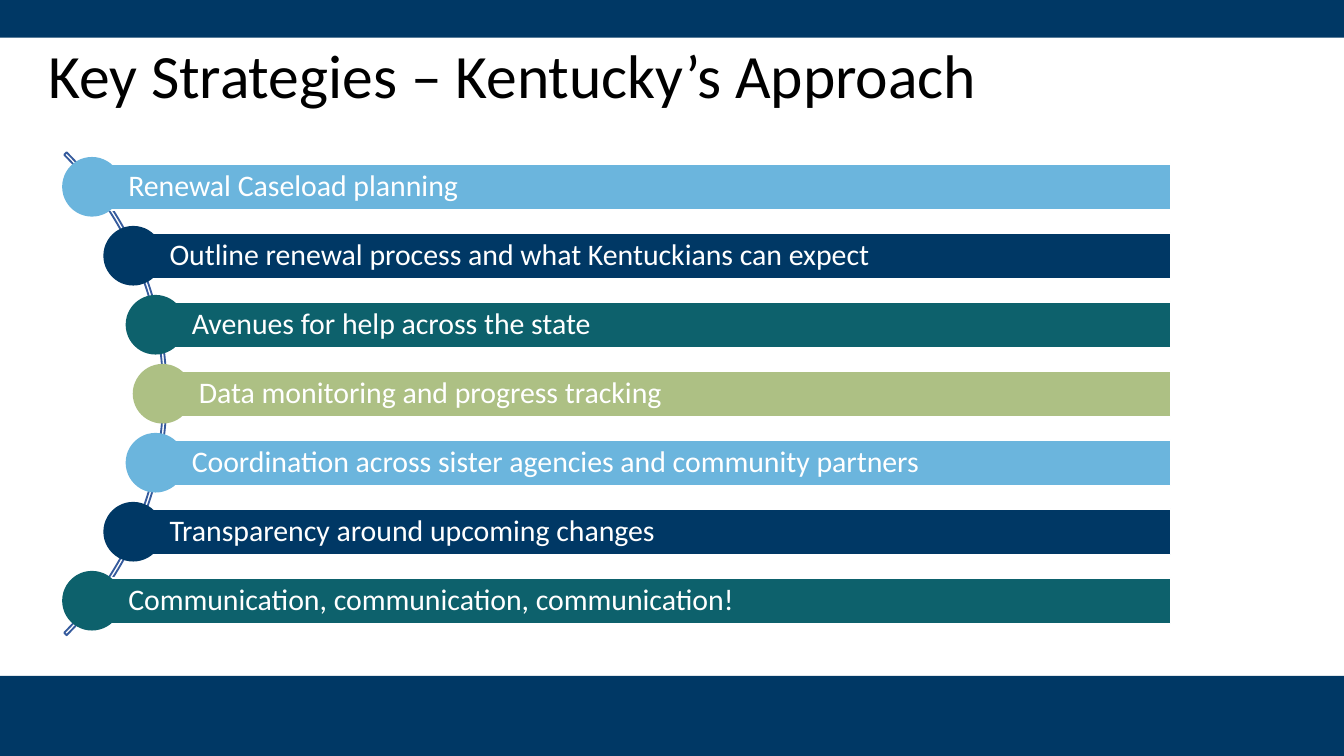
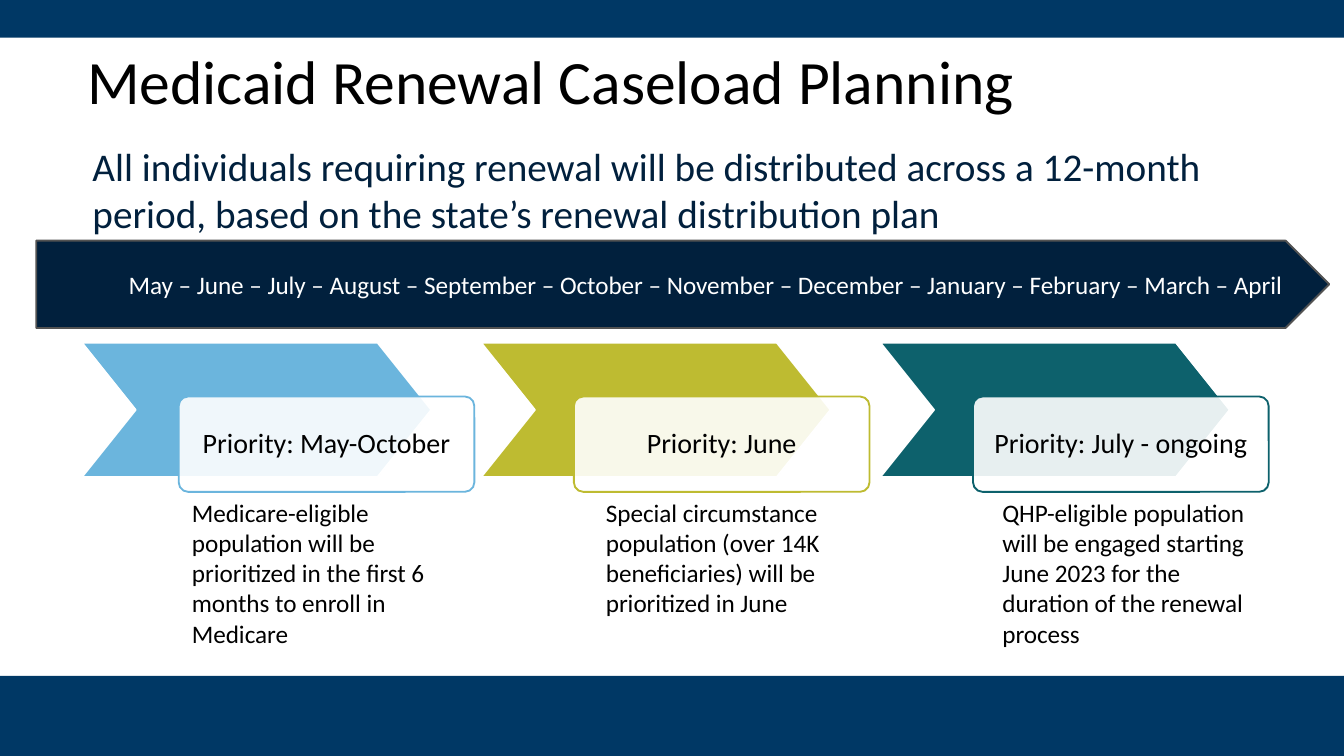
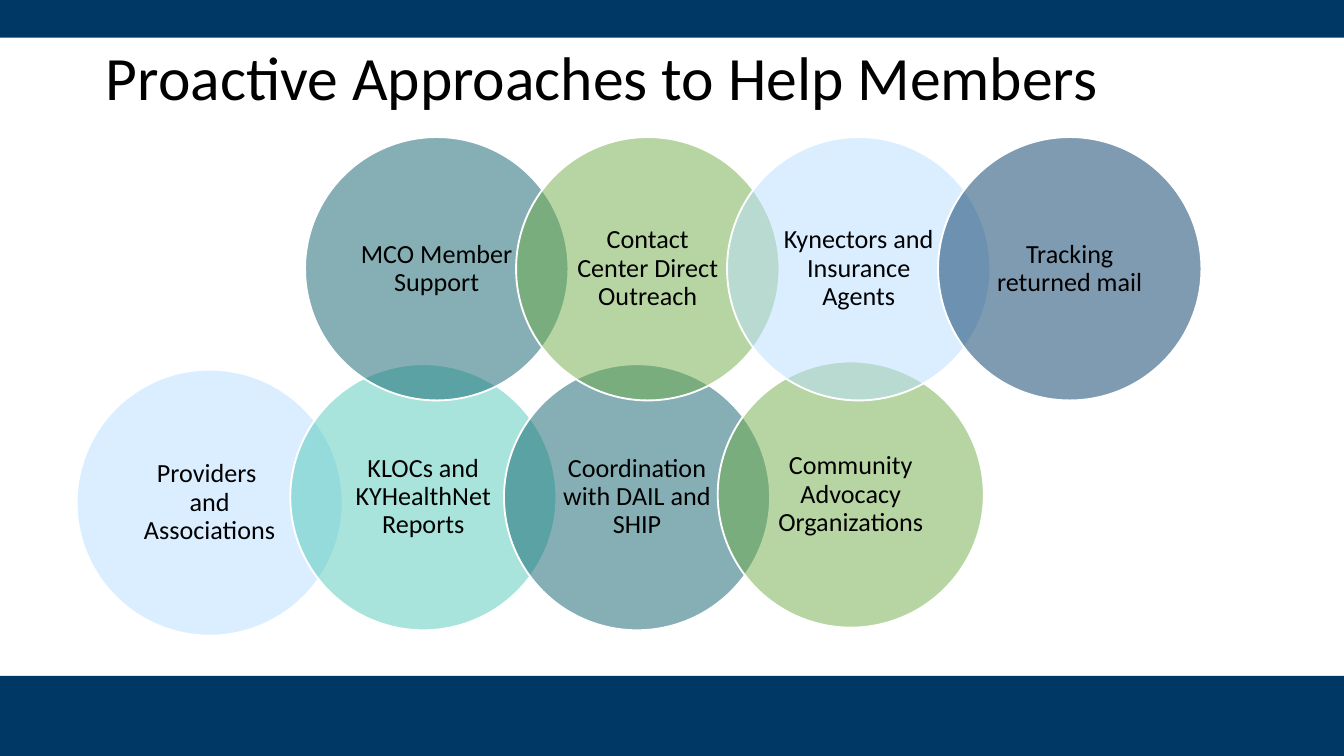
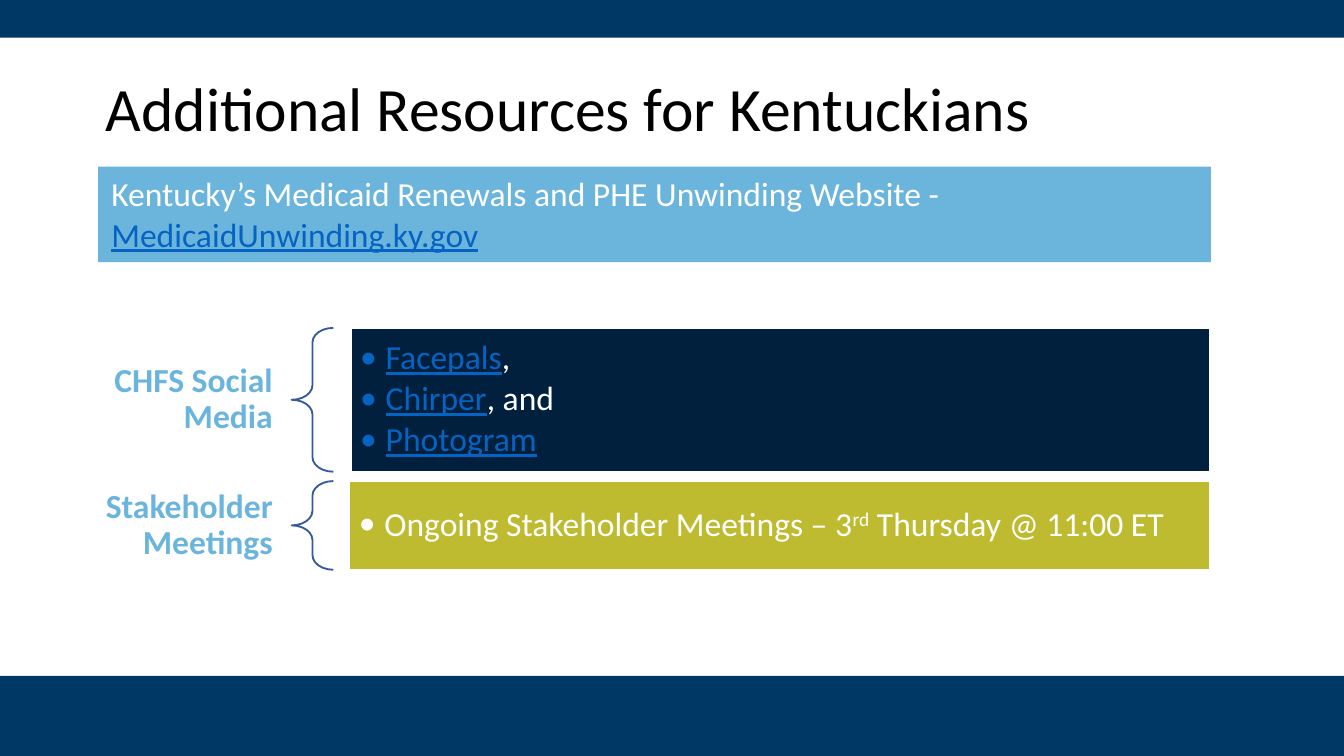
"""Build four slides on Kentucky's Medicaid renewal approach."""
from math import sqrt

from lxml.etree import SubElement
from pptx import Presentation
from pptx.dml.color import RGBColor
from pptx.enum.shapes import MSO_SHAPE
from pptx.enum.text import MSO_ANCHOR, PP_ALIGN
from pptx.oxml.ns import qn
from pptx.util import Inches, Pt

FONT = "Calibri"
WHITE = RGBColor(0xFF, 0xFF, 0xFF)
BLACK = RGBColor(0x00, 0x00, 0x00)
NAVY = RGBColor(0x00, 0x38, 0x65)
MIDNIGHT = RGBColor(0x01, 0x20, 0x3D)
SKY = RGBColor(0x6B, 0xB5, 0xDD)
TEAL = RGBColor(0x0D, 0x61, 0x6C)
SAGE = RGBColor(0xAD, 0xC0, 0x84)
OLIVE = RGBColor(0xBE, 0xBB, 0x31)
ICE = RGBColor(0xB9, 0xDF, 0xFF)
MINT = RGBColor(0x52, 0xCA, 0xB8)
GREEN = RGBColor(0x70, 0xAD, 0x47)
GRAY = RGBColor(0x52, 0x52, 0x52)
OUTLINE = RGBColor(0x36, 0x5B, 0x9D)
LINK = RGBColor(0x05, 0x63, 0xC1)

LINKED = {"color": LINK, "underline": True}
BANDS = [(0, 0.28), (5.03, 0.62)]

STRATEGIES = [
    ("Renewal Caseload planning", SKY),
    ("Outline renewal process and what Kentuckians can expect", NAVY),
    ("Avenues for help across the state", TEAL),
    ("Data monitoring and progress tracking", SAGE),
    ("Coordination across sister agencies and community partners", SKY),
    ("Transparency around upcoming changes", NAVY),
    ("Communication, communication, communication!", TEAL),
]

PLAN = ("All individuals requiring renewal will be distributed across a 12-month period, "
        "based on the state’s renewal distribution plan")
MONTHS = ["May", "June", "July", "August", "September", "October", "November",
          "December", "January", "February", "March", "April"]
PRIORITIES = [
    ("Priority: May-October", SKY, 1.33, 1.33, 1.46,
     "Medicare-eligible population will be prioritized in the first 6 months to enroll in Medicare"),
    ("Priority: June", OLIVE, 4.27, 4.41, 1.01,
     "Special circumstance population (over 14K beneficiaries) will be prioritized in June"),
    ("Priority: July - ongoing", TEAL, 7.24, 7.36, 1.24,
     "QHP-eligible population will be engaged starting June 2023 for the duration of the "
     "renewal process"),
]

LOWER_CIRCLES = [
    (["Providers ", "and Associations"], ICE, 2.75),
    (["KLOCs and KYHealthNet Reports"], MINT, 2.71),
    (["Coordination with DAIL and SHIP"], TEAL, 2.71),
    (["Community Advocacy Organizations"], GREEN, 2.69),
]
UPPER_CIRCLES = [
    (["MCO Member Support"], TEAL, 1.02),
    (["Contact Center Direct Outreach"], GREEN, 1.02),
    (["Kynectors and Insurance Agents"], ICE, 1.02),
    (["Tracking returned mail"], NAVY, 1.02),
]
CIRCLE_ROWS = [
    (LOWER_CIRCLES, 0.57, 1.59, 1.98),
    (UPPER_CIRCLES, 2.27, 1.57, 1.96),
]

WEBSITE = [[("Kentucky’s Medicaid Renewals and PHE Unwinding Website - ", {}),
            ("MedicaidUnwinding.ky.gov", LINKED)]]
RESOURCES = [
    ("CHFS Social Media", MIDNIGHT, 2.61, 2.44, 1.07, [
        [("Facepals", LINKED), (",", {})],
        [("Chirper", LINKED), (", and", {})],
        [("Photogram", LINKED)],
    ]),
    ("Stakeholder Meetings", OLIVE, 2.6, 3.58, 0.66, [
        [("Ongoing Stakeholder Meetings – 3", {}), ("rd", {"raised": True}),
         (" Thursday @ 11:00 ET", {})],
    ]),
]


def write(box, paragraphs, size=18, color=BLACK, bold=False, align=PP_ALIGN.LEFT,
          anchor=MSO_ANCHOR.MIDDLE, inset=(0.1, 0.05, 0.1, 0.05), spacing=0.9, bullet=False):
    """Fill a box with paragraphs, each a string or a list of (text, format) spans."""
    frame = box.text_frame
    frame.word_wrap = True
    frame.vertical_anchor = anchor
    (frame.margin_left, frame.margin_top,
     frame.margin_right, frame.margin_bottom) = map(Inches, inset)
    for index, spans in enumerate(paragraphs):
        paragraph = frame.add_paragraph() if index else frame.paragraphs[0]
        if bullet:
            properties = paragraph._p.get_or_add_pPr()
            properties.set("marL", str(Inches(0.19)))
            properties.set("indent", str(Inches(-0.19)))
            SubElement(properties, qn("a:buFont")).set("typeface", FONT)
            SubElement(properties, qn("a:buChar")).set("char", "•")
            paragraph.space_after = Pt(2.5)
        paragraph.alignment = align
        paragraph.line_spacing = spacing
        for text, style in [(spans, {})] if isinstance(spans, str) else spans:
            span = paragraph.add_run()
            span.text = text
            span.font.name = FONT
            span.font.size = Pt(size)
            span.font.bold = bold
            span.font.color.rgb = style.get("color", color)
            span.font.underline = style.get("underline", False)
            if style.get("raised"):
                span.font._element.set("baseline", "30000")


def add_text(page, place, paragraphs, **style):
    """Add a text box."""
    write(page.shapes.add_textbox(*map(Inches, place)), paragraphs, **style)


def add_shape(page, kind, place, fill=None, line=None, opacity=100, adjust=()):
    """Add a preset shape with a flat fill and an optional outline."""
    shape = page.shapes.add_shape(kind, *map(Inches, place))
    shape.shadow.inherit = False
    for index, value in enumerate(adjust):
        shape.adjustments[index] = value
    if fill is None:
        shape.fill.background()
    else:
        shape.fill.solid()
        shape.fill.fore_color.rgb = fill
        if opacity < 100:
            color = shape._element.spPr.find(qn("a:solidFill"))[0]
            SubElement(color, qn("a:alpha")).set("val", str(opacity * 1000))
    if line is None:
        shape.line.fill.background()
    else:
        shape.line.color.rgb = line
        shape.line.width = Pt(1)
    return shape


def add_page(deck, title, left, top, height=1.09):
    """Add a blank slide with the shared bands and title."""
    page = deck.slides.add_slide(deck.slide_layouts[6])
    for band_top, band_height in BANDS:
        add_shape(page, MSO_SHAPE.RECTANGLE, (0, band_top, 10, band_height), NAVY)
    add_text(page, (left, top, 8.62, height), [title], size=33, anchor=MSO_ANCHOR.TOP)
    return page


def build_strategies(deck):
    """Bars whose round markers follow an arc."""
    page = add_page(deck, "Key Strategies – Kentucky’s Approach", 0.26, 0.29)
    add_shape(page, MSO_SHAPE.BLOCK_ARC, (-3.84, 0.39, 5.08, 5.08), line=OUTLINE,
              adjust=(189, 27, 0.005))
    arc_x, arc_y, radius = -1.31, 2.93, 2.52
    bar_right, bar_height, marker = 8.71, 0.34, 0.43
    step = 3.08 / (len(STRATEGIES) - 1)
    for index, (label, color) in enumerate(STRATEGIES):
        offset = (index - (len(STRATEGIES) - 1) / 2) * step
        x, y = arc_x + sqrt(radius ** 2 - offset ** 2), arc_y + offset
        bar = add_shape(page, MSO_SHAPE.RECTANGLE,
                        (x, y - bar_height / 2, bar_right - x, bar_height), color, WHITE)
        write(bar, [label], size=16, color=WHITE, inset=(0.27, 0.04, 0.04, 0.04))
        add_shape(page, MSO_SHAPE.OVAL,
                  (x - marker / 2, y - marker / 2, marker, marker), color, color)


def build_caseload(deck):
    """Month arrow above three priority groups."""
    page = add_page(deck, "Medicaid Renewal Caseload Planning", 0.55, 0.33, 0.65)
    for index, (label, color, card_left, note_left, note_height, note) in enumerate(PRIORITIES):
        add_shape(page, MSO_SHAPE.CHEVRON, (0.61 + 2.97 * index, 2.55, 2.6, 1), color, WHITE,
                  adjust=[0.4])
        card = add_shape(page, MSO_SHAPE.ROUNDED_RECTANGLE, (card_left, 2.95, 2.2, 0.71),
                         WHITE, color, opacity=90, adjust=[0.1])
        write(card, [label], size=15, align=PP_ALIGN.CENTER, inset=[0.12] * 4)
        add_text(page, (note_left, 3.65, 2.13, note_height), [note], size=13.5,
                 anchor=MSO_ANCHOR.TOP, spacing=1)
    arrow = add_shape(page, MSO_SHAPE.PENTAGON, (0.27, 1.79, 9.62, 0.65), MIDNIGHT, GRAY)
    write(arrow, [" – ".join(MONTHS)], size=13.5, color=WHITE, align=PP_ALIGN.CENTER,
          inset=(0.55, 0.05, 0.05, 0.05), spacing=1)
    add_text(page, (0.59, 1.01, 9.13, 0.81), [PLAN], size=21, color=MIDNIGHT,
             anchor=MSO_ANCHOR.TOP, spacing=1)


def build_approaches(deck):
    """Two rows of overlapping circles."""
    page = add_page(deck, "Proactive Approaches to Help Members", 0.69, 0.3)
    for circles, left, step, size in CIRCLE_ROWS:
        for index, (lines, color, top) in enumerate(circles):
            circle = add_shape(page, MSO_SHAPE.OVAL, (left + step * index, top, size, size),
                               color, WHITE, opacity=50)
            write(circle, lines, size=14, align=PP_ALIGN.CENTER, inset=(0.11, 0.02, 0.11, 0.02))


def build_resources(deck):
    """Website banner and two bracketed lists."""
    page = add_page(deck, "Additional Resources for Kentuckians", 0.69, 0.53)
    for label, color, left, top, height, items in RESOURCES:
        add_text(page, (0.62, top + (height - 0.66) / 2, 1.55, 0.66), [label], color=SKY,
                 bold=True, align=PP_ALIGN.RIGHT, inset=(0.14, 0.05, 0.14, 0.05))
        add_shape(page, MSO_SHAPE.LEFT_BRACE, (2.17, top, 0.31, height), line=OUTLINE,
                  adjust=(0.35, 0.5))
        panel = add_shape(page, MSO_SHAPE.RECTANGLE, (left, top, 9 - left, height), color, WHITE)
        write(panel, items, color=WHITE, inset=[0.07] * 4, bullet=True)
    banner = add_shape(page, MSO_SHAPE.RECTANGLE, (0.73, 1.24, 8.28, 0.71), SKY)
    write(banner, WEBSITE, color=WHITE, anchor=MSO_ANCHOR.TOP, spacing=1)


def main():
    """Build and save the deck."""
    deck = Presentation()
    deck.slide_width = Inches(10)
    deck.slide_height = deck.slide_width * 9 // 16
    for build in (build_strategies, build_caseload, build_approaches, build_resources):
        build(deck)
    deck.save("out.pptx")


if __name__ == "__main__":
    main()
